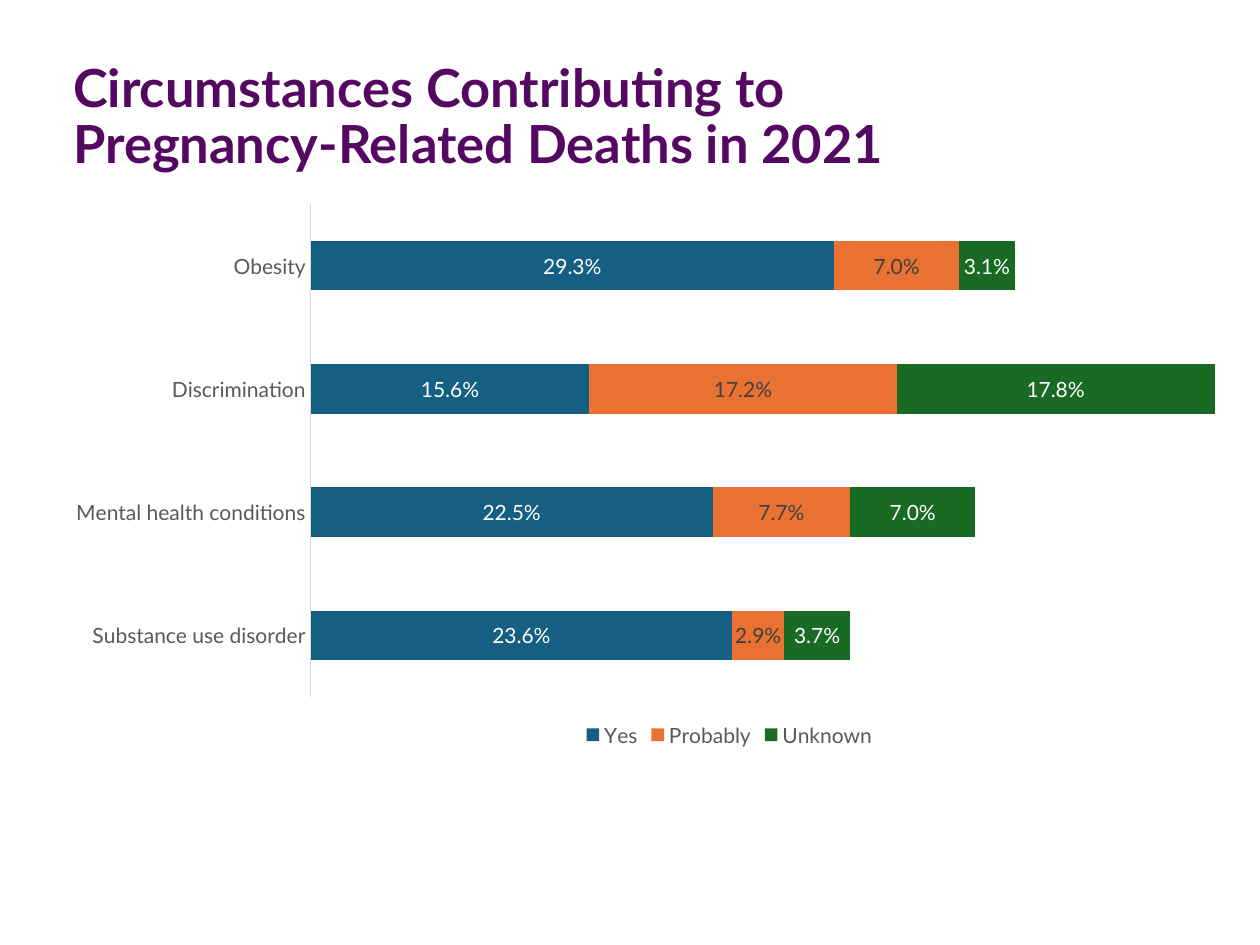
import pptx
import pptx.util
import pptx.dml.color
import pptx.chart.data
import pptx.enum.chart
import pptx.enum.text

Pt = pptx.util.Pt
FONT = "Lato"


def rgb(value):
    return pptx.dml.color.RGBColor.from_string(value)


def style(font, size, color, bold=False):
    font.name = FONT
    font.size = Pt(size)
    font.bold = bold
    font.color.rgb = rgb(color)


prs = pptx.Presentation()
prs.slide_width, prs.slide_height = Pt(720), Pt(540)
s = prs.slides.add_slide(prs.slide_layouts[5])

# Title
title = s.shapes.title
title.left, title.top, title.width, title.height = Pt(41.8), Pt(25.2), Pt(516.2), Pt(85)
tf = title.text_frame
tf.text = "Circumstances Contributing to Pregnancy-Related Deaths in 2021"
tf.word_wrap = True
tf.auto_size = pptx.enum.text.MSO_AUTO_SIZE.NONE
tf.vertical_anchor = pptx.enum.text.MSO_ANCHOR.MIDDLE
tf.margin_left = 0
tf.margin_top = tf.margin_right = tf.margin_bottom = Pt(7.2)
p = tf.paragraphs[0]
p.alignment = pptx.enum.text.PP_ALIGN.LEFT
p.line_spacing = 0.9
style(p.runs[0].font, 30, "550861", bold=True)

# Stacked bars: name, values, fill, label colour
answers = [
    ("Yes", (0.236, 0.225, 0.156, 0.293), "156082", "FFFFFF"),
    ("Probably", (0.029, 0.077, 0.172, 0.07), "E97132", "404040"),
    ("Unknown", (0.037, 0.07, 0.178, 0.031), "196B24", "FFFFFF"),
]
data = pptx.chart.data.CategoryChartData(number_format="0.0%")
data.categories = ["Substance use disorder", "Mental health conditions",
                   "Discrimination", "Obesity"]
for name, values, fill, label_color in answers:
    data.add_series(name, values)

chart = s.shapes.add_chart(pptx.enum.chart.XL_CHART_TYPE.BAR_STACKED,
                           Pt(28), Pt(110.2), Pt(777.6), Pt(319.7), data).chart
style(chart.font, 10, "000000")
chart.has_title = False

chart.has_legend = True
chart.legend.position = pptx.enum.chart.XL_LEGEND_POSITION.BOTTOM
chart.legend.include_in_layout = False
style(chart.legend.font, 12, "595959")

axis = chart.category_axis
axis.major_tick_mark = axis.minor_tick_mark = pptx.enum.chart.XL_TICK_MARK.NONE
axis.format.line.color.rgb = rgb("D9D9D9")
axis.format.line.width = Pt(0.75)
style(axis.tick_labels.font, 12, "595959")

axis = chart.value_axis
axis.visible = False
axis.has_major_gridlines = False
axis.minimum_scale, axis.maximum_scale = 0, 0.6

plot = chart.plots[0]
plot.gap_width = 150
plot.overlap = 100
plot.vary_by_categories = False
for series, (name, values, fill, label_color) in zip(plot.series, answers):
    series.format.fill.solid()
    series.format.fill.fore_color.rgb = rgb(fill)
    series.invert_if_negative = False
    labels = series.data_labels
    labels.show_value = True
    labels.number_format = "0.0%"
    labels.number_format_is_linked = False
    labels.position = pptx.enum.chart.XL_LABEL_POSITION.CENTER
    style(labels.font, 12, label_color)

prs.save("out.pptx")
